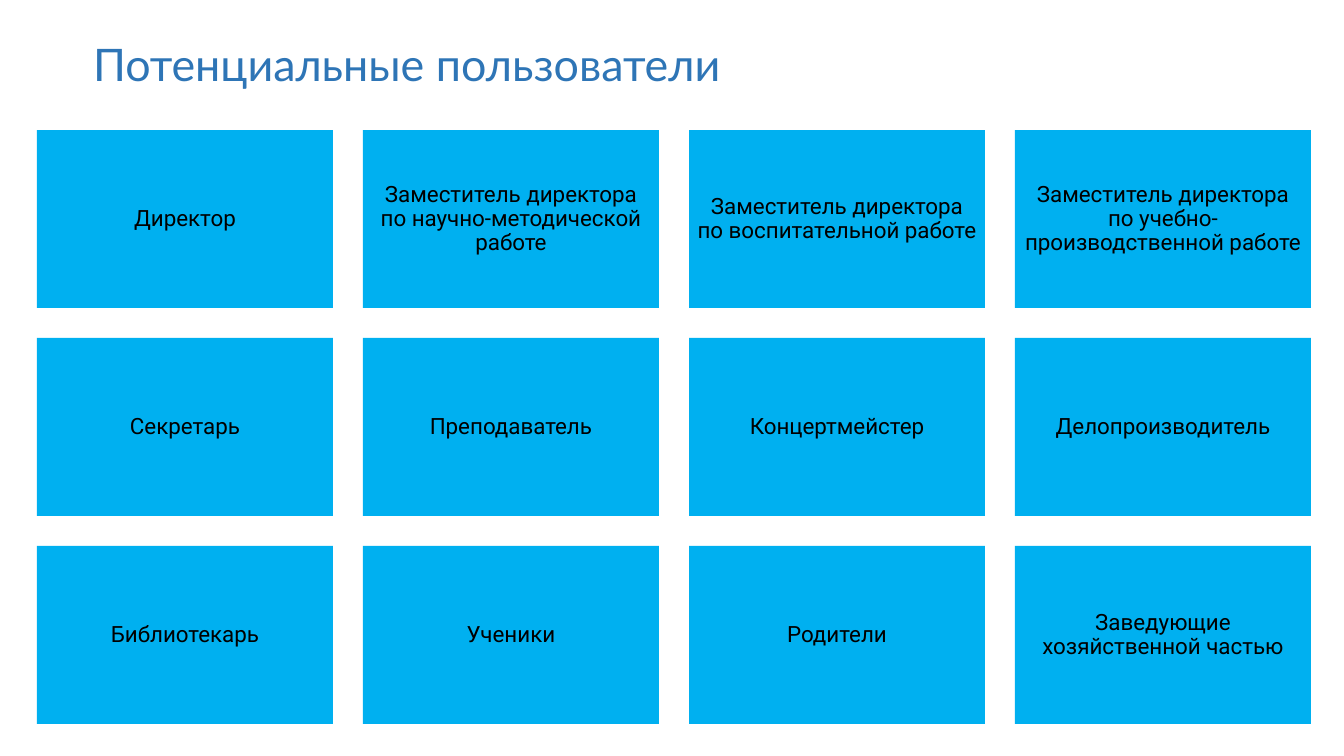
from pptx import Presentation
from pptx.dml.color import RGBColor
from pptx.enum.shapes import MSO_SHAPE as Shape
from pptx.enum.text import MSO_ANCHOR as Anchor, PP_ALIGN as Align
from pptx.util import Emu, Pt

TITLE = "Потенциальные пользователи"
USERS = [
    ["Директор",
     "Заместитель директора по научно-методической работе",
     "Заместитель директора по воспитательной работе",
     "Заместитель директора по учебно-производственной работе"],
    ["Секретарь", "Преподаватель", "Концертмейстер", "Делопроизводитель"],
    ["Библиотекарь", "Ученики", "Родители", "Заведующие хозяйственной частью"],
]

TITLE_BLUE = RGBColor(0x2E, 0x75, 0xB6)
CARD_BLUE = RGBColor(0x00, 0xB0, 0xF0)
BLACK = RGBColor(0x00, 0x00, 0x00)

SLIDE_W, SLIDE_H = 1344, 756
TITLE_BOX = (80, 30, 1009, 68)
GRID_LEFT, GRID_TOP = 37, 130
CARD_W, CARD_H, GAP = 296, 178, 30

TITLE_FONT = {"name": "Lato", "size": Pt(32)}
CARD_FONT = {"name": "Roboto", "size": Pt(16)}
CARD_PARAGRAPH = {"alignment": Align.CENTER, "line_spacing": 0.9}


def px(length):
    return Emu(round(length * 914400 / 100.8))


def set_all(target, values):
    for name, value in values.items():
        setattr(target, name, value)


def write(shape, text, font, color, anchor, side_inset, paragraph_format):
    frame = shape.text_frame
    set_all(frame, {
        "word_wrap": True, "vertical_anchor": anchor,
        "margin_left": px(side_inset), "margin_right": px(side_inset),
        "margin_top": px(7), "margin_bottom": px(7),
    })
    paragraph = frame.paragraphs[0]
    set_all(paragraph, paragraph_format)
    run = paragraph.add_run()
    run.text = text
    set_all(run.font, font)
    run.font.color.rgb = color


def add_card(slide, row, column, user):
    left = GRID_LEFT + column * (CARD_W + GAP)
    top = GRID_TOP + row * (CARD_H + GAP)
    card = slide.shapes.add_shape(
        Shape.RECTANGLE, px(left), px(top), px(CARD_W), px(CARD_H))
    card.shadow.inherit = False
    card.fill.solid()
    card.fill.fore_color.rgb = CARD_BLUE
    card.line.fill.background()
    write(card, user, CARD_FONT, BLACK, Anchor.MIDDLE, 7, CARD_PARAGRAPH)


def main():
    deck = Presentation()
    deck.slide_width, deck.slide_height = px(SLIDE_W), px(SLIDE_H)
    slide = deck.slides.add_slide(deck.slide_layouts[6])
    title = slide.shapes.add_textbox(*map(px, TITLE_BOX))
    write(title, TITLE, TITLE_FONT, TITLE_BLUE, Anchor.TOP, 13, {})
    for row, users in enumerate(USERS):
        for column, user in enumerate(users):
            add_card(slide, row, column, user)
    deck.save("out.pptx")


if __name__ == "__main__":
    main()
